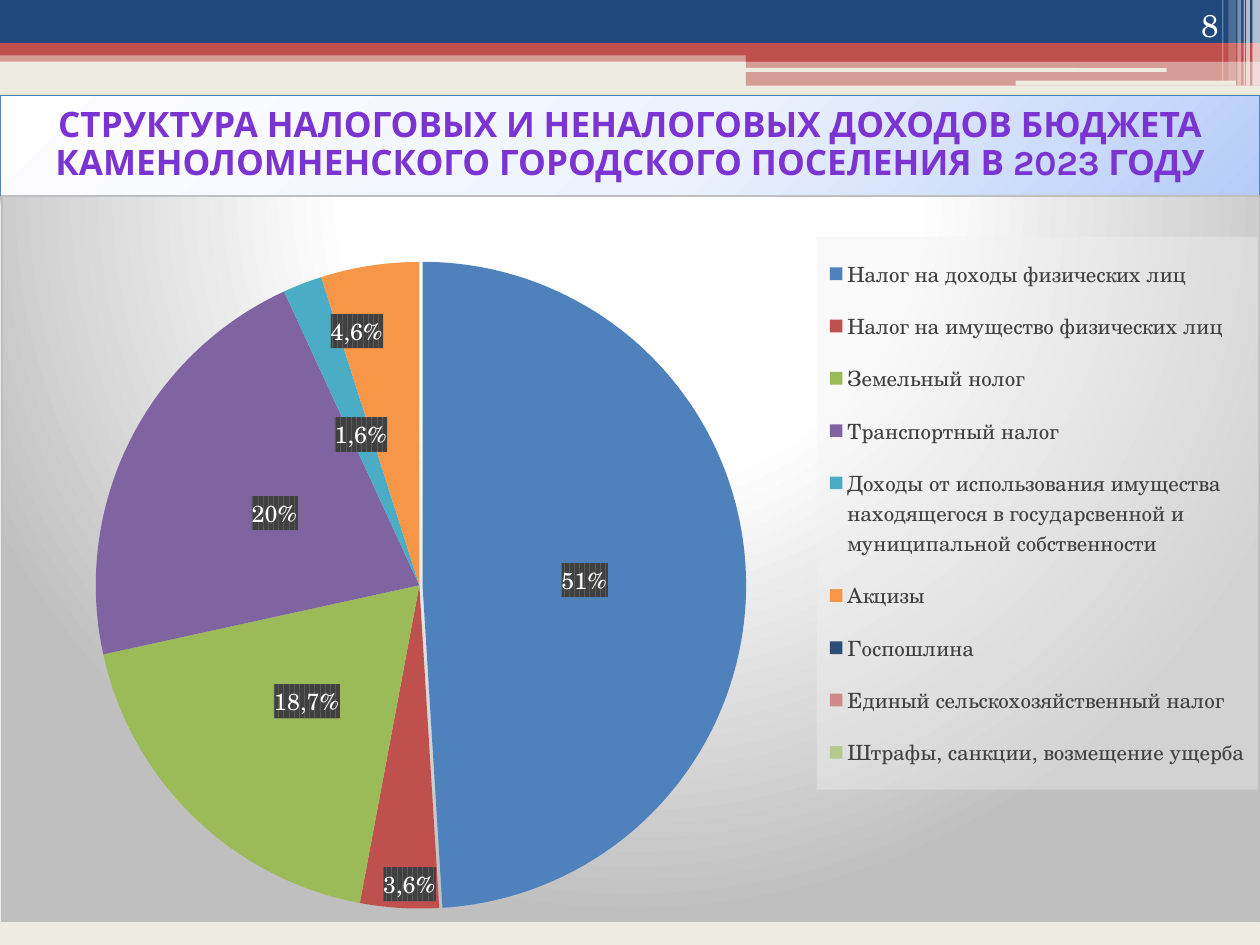
from lxml.etree import fromstring
from pptx import Presentation
from pptx.chart.data import CategoryChartData
from pptx.dml.color import RGBColor
from pptx.enum.chart import XL_CHART_TYPE, XL_LABEL_POSITION, XL_LEGEND_POSITION
from pptx.enum.shapes import MSO_SHAPE
from pptx.enum.text import MSO_ANCHOR, MSO_AUTO_SIZE, PP_ALIGN
from pptx.oxml.ns import qn
from pptx.util import Inches, Pt

COLORS = {
    "background": "EEECE1", "navy": "1F497D", "red": "C0504D", "white": "FFFFFF",
    "title": "7B34D2", "title_line": "4F81BD", "legend_text": "404040",
    "legend_fill": "F2F2F2", "label_dark": "404040", "label_light": "595959",
    "border": "BFBFBF", "black": "000000",
}
FONT = "TeX Gyre Schola"
NAMESPACES = (
    'xmlns:a="http://schemas.openxmlformats.org/drawingml/2006/main" '
    'xmlns:c="http://schemas.openxmlformats.org/drawingml/2006/chart"'
)
SLICES = [
    ("Налог на доходы физических лиц", 50, "4F81BD", 100, "51%", None),
    ("Налог на имущество физических лиц", 4, "C0504D", 100, "3,6%", (0, 0.19)),
    ("Земельный нолог", 19, "9BBB59", 100, "18,7%", None),
    ("Транспортный налог", 22, "8064A2", 100, "20%", None),
    ("Доходы от использования имущества \nнаходящегося в государсвенной и \n"
     "муниципальной собственности", 2, "4BACC6", 100, "1,6%", None),
    ("Акцизы", 5, "F79646", 100, "4,6%", (-0.03, -0.13)),
    ("Госпошлина", 0, "2C4D75", 100, "0,1%", (0, -0.04)),
    ("Единый сельскохозяйственный налог", 0, "C0504D", 60, None, None),
    ("Штрафы, санкции, возмещение ущерба", 0, "9BBB59", 60, "", None),
]
BARS = [
    (0, 0.4, 10, 0.09, "red", 50), (0, 0, 10, 0.34, "navy", 100),
    (0, 0.34, 10, 0.1, "red", 100), (5.92, 0.39, 4.08, 0.1, "red", 100),
    (5.92, 0.48, 4.08, 0.2, "red", 50),
    (5.91, 0.54, 3.35, 0.03, "background", 100),
    (8.06, 0.64, 1.75, 0.04, "background", 100),
    (9.94, 0, 0.06, 0.68, "white", 65), (9.89, 0, 0.03, 0.68, "white", 65),
    (9.87, 0, 0.01, 0.68, "white", 60), (9.82, 0, 0.03, 0.68, "white", 40),
    (9.75, 0, 0.06, 0.64, "white", 20), (9.7, 0, 0.01, 0.64, "white", 30),
]


def element(markup):
    head, rest = markup.split(">", 1)
    if head.endswith("/"):
        return fromstring(f"{head[:-1]} {NAMESPACES}/>{rest}")
    return fromstring(f"{head} {NAMESPACES}>{rest}")


def rgb(name):
    return RGBColor.from_string(COLORS.get(name, name))


def gradient(stops, focus):
    marks = "".join(
        f'<a:gs pos="{position * 1000}"><a:srgbClr val="{color}"/></a:gs>'
        for position, color in stops
    )
    sides = " ".join(f'{side}="{value * 1000}"' for side, value in zip("ltrb", focus))
    return (f'<a:gradFill><a:gsLst>{marks}</a:gsLst><a:path path="circle">'
            f'<a:fillToRect {sides}/></a:path></a:gradFill>')


def layout(**values):
    modes = '<c:xMode val="edge"/><c:yMode val="edge"/>' if "w" in values else ""
    target = '<c:layoutTarget val="inner"/>' if values.pop("inner", False) else ""
    sizes = "".join(f'<c:{key} val="{value}"/>' for key, value in values.items())
    return element(f"<c:layout><c:manualLayout>{target}{modes}{sizes}"
                   "</c:manualLayout></c:layout>")


class SlideBuilder:
    def __init__(self, presentation):
        self.slide = presentation.slides.add_slide(presentation.slide_layouts[5])
        fill = self.slide.background.fill
        fill.solid()
        fill.fore_color.rgb = rgb("background")

    def style_font(self, font, size, color, bold=False, name=FONT):
        font.name, font.size, font.bold = name, Pt(size), bold
        font.color.rgb = rgb(color)

    def set_fill(self, fill, color, opacity=100):
        fill.solid()
        fill.fore_color.rgb = rgb(color)
        if opacity < 100:
            color_node = fill._xPr.find(qn("a:solidFill"))[0]
            color_node.append(element(f'<a:alpha val="{opacity * 1000}"/>'))

    def bar(self, left, top, width, height, color, opacity):
        kind = MSO_SHAPE.ROUNDED_RECTANGLE if color == "background" else MSO_SHAPE.RECTANGLE
        shape = self.slide.shapes.add_shape(
            kind, Inches(left), Inches(top), Inches(width), Inches(height))
        shape.shadow.inherit = False
        shape.line.fill.background()
        self.set_fill(shape.fill, color, opacity)

    def title(self, text):
        shape = self.slide.shapes.title
        shape.left, shape.top, shape.width, shape.height = map(Inches, (0, 0.76, 10, 0.79))
        properties = shape._element.spPr
        properties.append(element('<a:prstGeom prst="rect"><a:avLst/></a:prstGeom>'))
        properties.append(element(gradient(
            [(0, "FEFEFF"), (55, "EDF3FD"), (100, "B5CCF9")], (-40, -90, 140, 190))))
        shape.line.color.rgb = rgb("title_line")
        shape.line.width = Pt(0.75)
        properties.append(element(
            '<a:effectLst><a:outerShdw blurRad="52000" dist="25400" dir="5400000">'
            '<a:srgbClr val="000000"><a:alpha val="40000"/></a:srgbClr>'
            '</a:outerShdw></a:effectLst>'))
        frame = shape.text_frame
        frame.text = text
        frame.word_wrap = True
        frame.auto_size = MSO_AUTO_SIZE.NONE
        frame.vertical_anchor = MSO_ANCHOR.MIDDLE
        paragraph = frame.paragraphs[0]
        paragraph.alignment = PP_ALIGN.CENTER
        paragraph.line_spacing = 0.9
        self.style_font(paragraph.font, 20, "title", True, "Karla")

    def page_number(self, text):
        box = self.slide.shapes.add_textbox(Inches(8.94), Inches(0), Inches(0.83), Inches(0.4))
        frame = box.text_frame
        frame.text = text
        frame.word_wrap = True
        frame.vertical_anchor = MSO_ANCHOR.BOTTOM
        paragraph = frame.paragraphs[0]
        paragraph.alignment = PP_ALIGN.RIGHT
        self.style_font(paragraph.font, 18, "white")

    def pie(self, slices):
        data = CategoryChartData()
        data.categories = [entry[0] for entry in slices]
        data.add_series("Series 1", [entry[1] for entry in slices])
        chart = self.slide.shapes.add_chart(
            XL_CHART_TYPE.PIE, Inches(0.01), Inches(1.55), Inches(9.99), Inches(5.77), data).chart
        chart.has_title = False
        self.style_font(chart.font, 10, "black")
        area = gradient([(0, "FFFFFF"), (39, "FFFFFF"), (100, "BFBFBF")], (50, -80, 50, 180))
        chart._chartSpace.find(qn("c:txPr")).addprevious(element(
            f'<c:spPr>{area}<a:ln w="9525"><a:solidFill>'
            f'<a:srgbClr val="{COLORS["border"]}"/></a:solidFill></a:ln></c:spPr>'))
        plot_area = chart._chartSpace.chart.plotArea
        for old in plot_area.findall(qn("c:layout")):
            plot_area.remove(old)
        plot_area.insert(0, layout(inner=True, x=0.066, y=0.091, w=0.532, h=0.891))
        chart.plots[0].vary_by_categories = True
        self.legend(chart)
        self.slices(chart.plots[0].series[0], slices)

    def legend(self, chart):
        chart.has_legend = True
        legend = chart.legend
        legend.position = XL_LEGEND_POSITION.RIGHT
        legend.include_in_layout = False
        self.style_font(legend.font, 12, "legend_text")
        node = legend._element
        for old in node.findall(qn("c:layout")):
            node.remove(old)
        node.find(qn("c:legendPos")).addnext(layout(x=0.648, y=0.056, w=0.351, h=0.762))
        node.find(qn("c:txPr")).addprevious(element(
            f'<c:spPr><a:solidFill><a:srgbClr val="{COLORS["legend_fill"]}">'
            '<a:alpha val="39000"/></a:srgbClr></a:solidFill></c:spPr>'))

    def label_box(self):
        return element(
            '<c:spPr><a:pattFill prst="dkVert">'
            f'<a:fgClr><a:srgbClr val="{COLORS["label_dark"]}"/></a:fgClr>'
            f'<a:bgClr><a:srgbClr val="{COLORS["label_light"]}"/></a:bgClr>'
            '</a:pattFill></c:spPr>')

    def slices(self, series, slices):
        labels = series.data_labels
        labels.show_percentage, labels.show_value = True, False
        labels.position = XL_LABEL_POSITION.CENTER
        self.style_font(labels.font, 13.3, "white", True)
        labels._element.find(qn("c:txPr")).addprevious(self.label_box())
        for index, (_, _, color, opacity, text, offset) in enumerate(slices):
            point = series.points[index]
            self.set_fill(point.format.fill, color, opacity)
            if text:
                self.point_label(point.data_label, text, offset)
            elif text == "":
                labels._element.findall(qn("c:dLbl"))[-1].addnext(element(
                    f'<c:dLbl><c:idx val="{index}"/><c:delete val="1"/></c:dLbl>'))
        explosion = element('<c:explosion val="1"/>')
        series.points[0].format.fill._xPr.addprevious(explosion)

    def point_label(self, label, text, offset):
        frame = label.text_frame
        frame.text = text
        self.style_font(frame.paragraphs[0].font, 13.3, "white")
        label.position = XL_LABEL_POSITION.CENTER
        node = label._dLbl
        node.find(qn("c:tx")).addnext(self.label_box())
        if offset:
            node.find(qn("c:idx")).addnext(layout(x=offset[0], y=offset[1]))


def main():
    presentation = Presentation()
    presentation.slide_width, presentation.slide_height = Inches(10), Inches(7.5)
    builder = SlideBuilder(presentation)
    for bar in BARS:
        builder.bar(*bar)
    builder.title("СТРУКТУРА НАЛОГОВЫХ И НЕНАЛОГОВЫХ ДОХОДОВ БЮДЖЕТА "
                  "КАМЕНОЛОМНЕНСКОГО ГОРОДСКОГО ПОСЕЛЕНИЯ В 2023 ГОДУ")
    builder.page_number("8")
    builder.pie(SLICES)
    presentation.save("out.pptx")


if __name__ == "__main__":
    main()
